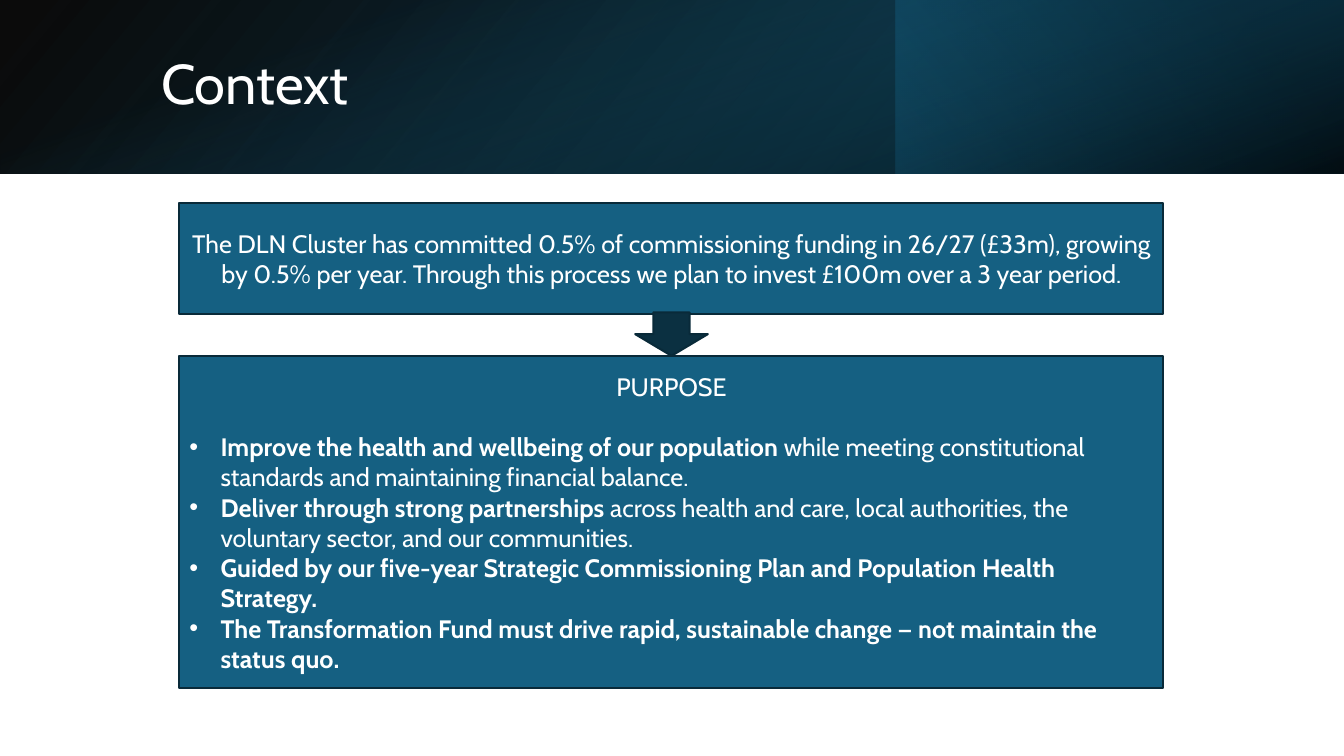
from lxml.etree import SubElement
from pptx import Presentation
from pptx.dml.color import RGBColor as Rgb
from pptx.enum.shapes import MSO_SHAPE as Preset
from pptx.enum.text import MSO_ANCHOR as Anchor, PP_ALIGN as Align
from pptx.oxml.ns import qn
from pptx.util import Inches, Pt

COLORS = {
    "white": "FFFFFF",
    "black": "000000",
    "panel": "156082",
    "teal": "104862",
    "navy": "0B3041",
    "outline": "092A39",
}
FONT = "Cabin"
TITLE = "Context"
COMMITMENT = (
    "The DLN Cluster has committed 0.5% of commissioning funding in 26/27 (£33m), "
    "growing by 0.5% per year. Through this process we plan to invest £100m "
    "over a 3 year period."
)
HEADING = "PURPOSE"
PURPOSES = [
    ("Improve the health and wellbeing of our population",
     " while meeting constitutional standards and maintaining financial balance."),
    ("Deliver through strong partnerships",
     " across health and care, local authorities, the voluntary sector, "
     "and our communities."),
    ("Guided by our five-year Strategic Commissioning Plan and Population Health "
     "Strategy.", ""),
    ("The Transformation Fund must drive rapid, sustainable change — not maintain "
     "the status quo.", ""),
]

WIDTH, HEIGHT, BANNER = 13.33, 7.5, 1.72
PANEL_LEFT, PANEL_WIDTH = 1.78, 9.76
ARROW_WIDTH = 0.72
BANNER_LAYERS = [
    {"left": 0, "width": WIDTH, "turn": 0, "flip": True, "angle": 140,
     "stops": [(0, "black", 96), (100, "teal", 100)]},
    {"left": WIDTH * 2 / 3, "width": WIDTH / 3, "turn": 180, "flip": False, "angle": 320,
     "stops": [(19, "navy", 68), (100, "panel", 79)]},
    {"left": 0, "width": WIDTH, "turn": 90, "flip": False, "angle": 340,
     "stops": [(23, "panel", 0), (99, "black", 74)]},
]


def color(name):
    return Rgb.from_string(COLORS[name])


def add_preset(page, preset, left, top, width, height):
    shape = page.shapes.add_shape(preset, *map(Inches, (left, top, width, height)))
    shape.shadow.inherit = False
    return shape


def add_banner_layer(page, layer):
    width, height = layer["width"], BANNER
    left, top = layer["left"], 0
    if layer["turn"] == 90:
        left, top = left + (width - height) / 2, (height - width) / 2
        width, height = height, width
    shape = add_preset(page, Preset.RECTANGLE, left, top, width, height)
    shape.rotation = layer["turn"]
    if layer["flip"]:
        shape._element.spPr.find(qn("a:xfrm")).set("flipH", "1")
    shape.fill.gradient()
    shape.fill.gradient_angle = 360 - layer["angle"]
    for stop, (position, name, _) in zip(shape.fill.gradient_stops, layer["stops"]):
        stop.position = position / 100
        stop.color.rgb = color(name)
    tints = shape._element.spPr.iter(qn("a:srgbClr"))
    for tint, (_, _, opacity) in zip(tints, layer["stops"]):
        SubElement(tint, qn("a:alpha"), val=str(opacity * 1000))
    shape.line.fill.background()


def add_solid(page, preset, fill, *place):
    shape = add_preset(page, preset, *place)
    shape.fill.solid()
    shape.fill.fore_color.rgb = color(fill)
    shape.line.color.rgb = color("outline")
    shape.line.width = Pt(1.5)
    return shape


def prepare_frame(box):
    frame = box.text_frame
    frame.word_wrap = True
    frame.vertical_anchor = Anchor.MIDDLE
    return frame


def add_span(para, text, size=18, bold=False):
    span = para.add_run()
    span.text = text
    for key, value in {"name": FONT, "size": Pt(size), "bold": bold}.items():
        setattr(span.font, key, value)
    span.font.color.rgb = color("white")


def add_bullet(para):
    props = para._p.get_or_add_pPr()
    indent = Inches(0.31)
    props.set("marL", str(indent))
    props.set("indent", str(-indent))
    SubElement(props, qn("a:buFont"), typeface="Arial")
    SubElement(props, qn("a:buChar"), char="•")


def main():
    deck = Presentation()
    deck.slide_width, deck.slide_height = Inches(WIDTH), Inches(HEIGHT)
    page = deck.slides.add_slide(deck.slide_layouts[6])

    for layer in BANNER_LAYERS:
        add_banner_layer(page, layer)

    title = page.shapes.add_textbox(*map(Inches, (1.5, 0.38, 10.98, 0.96)))
    para = prepare_frame(title).paragraphs[0]
    para.line_spacing = 0.9
    add_span(para, TITLE, size=40)

    commitment = add_solid(page, Preset.RECTANGLE, "panel", PANEL_LEFT, 2.01, PANEL_WIDTH, 1.11)
    para = prepare_frame(commitment).paragraphs[0]
    para.alignment = Align.CENTER
    add_span(para, COMMITMENT)

    purpose = add_solid(page, Preset.RECTANGLE, "panel", PANEL_LEFT, 3.53, PANEL_WIDTH, 3.3)
    frame = prepare_frame(purpose)
    para = frame.paragraphs[0]
    para.alignment = Align.CENTER
    para.space_after = Pt(21.6)
    add_span(para, HEADING)
    for lead, rest in PURPOSES:
        para = frame.add_paragraph()
        para.alignment = Align.LEFT
        add_bullet(para)
        add_span(para, lead, bold=True)
        if rest:
            add_span(para, rest)

    arrow_left = PANEL_LEFT + (PANEL_WIDTH - ARROW_WIDTH) / 2
    add_solid(page, Preset.DOWN_ARROW, "navy", arrow_left, 3.1, ARROW_WIDTH, 0.43)

    deck.save("out.pptx")


if __name__ == "__main__":
    main()
